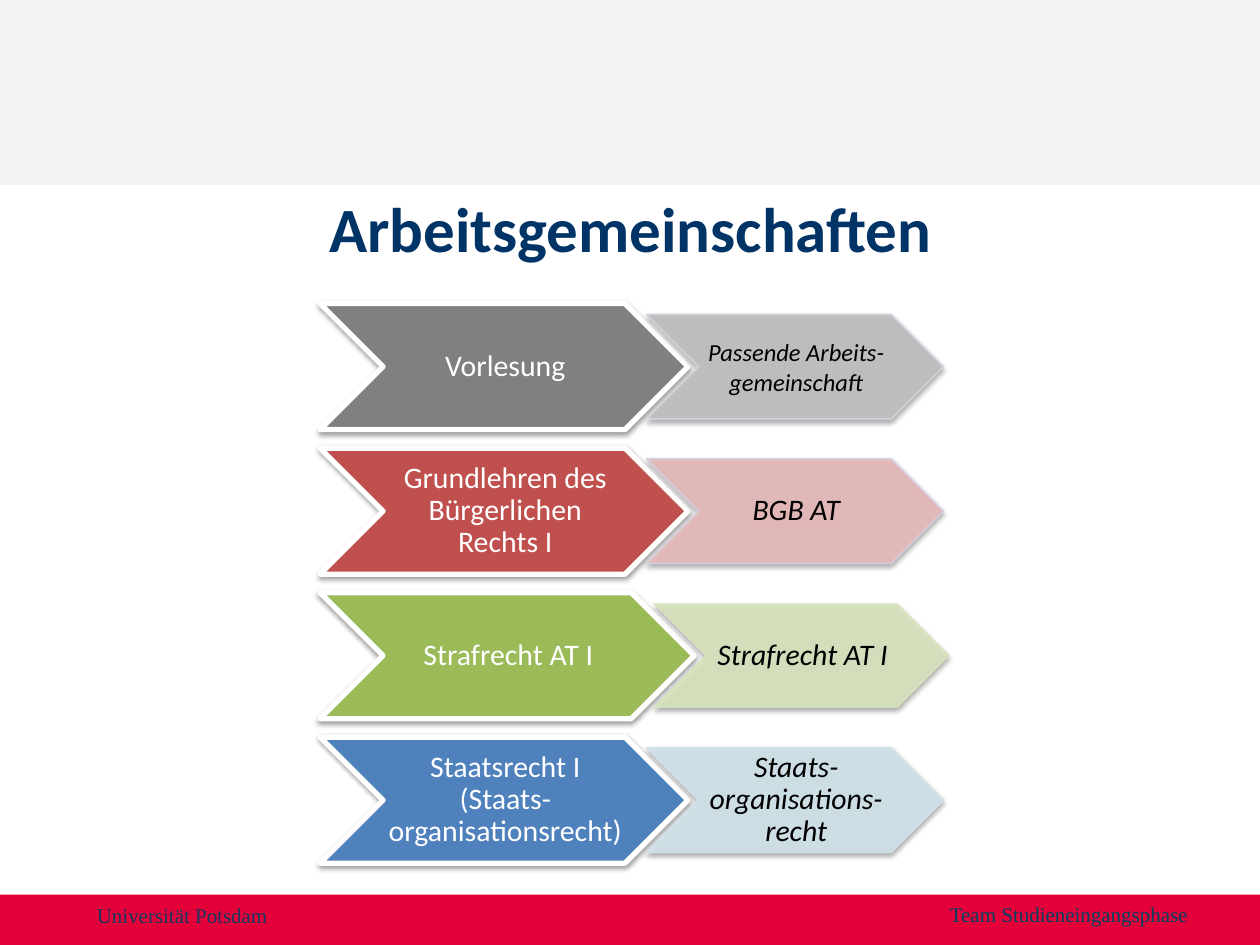
from lxml import etree
from pptx import Presentation
from pptx.dml.color import RGBColor
from pptx.enum import shapes, text
from pptx.oxml import ns
from pptx.util import Inches, Pt

COLORS = {
    "band": "F2F2F2", "footer": "E4013A", "university": "17375E",
    "team": "014260", "title": "003366", "white": "FFFFFF", "black": "000000",
}
TITLE = "Arbeitsgemeinschaften"
UNIVERSITY = "Universität Potsdam"
TEAM = "Team Studieneingangsphase"
COURSES = [
    {"lecture": "Vorlesung", "fill": "808080", "width": 2.92,
     "group": ["Passende Arbeits-", "gemeinschaft"], "size": 14, "spacing": 1.0,
     "group_fill": "BFBFBF", "border": "D8D3E0"},
    {"lecture": "Grundlehren des Bürgerlichen Rechts I", "fill": "C0504D", "width": 2.92,
     "group": ["BGB AT"], "group_fill": "E6B9B8", "border": "D2D2E4"},
    {"lecture": "Strafrecht AT I", "fill": "9BBB59", "width": 2.97,
     "group": ["Strafrecht AT I"], "group_fill": "D7E4BD", "border": None},
    {"lecture": "Staatsrecht I (Staats-organisationsrecht)", "fill": "4F81BD", "width": 2.92,
     "group": ["Staats-organisations-recht"], "group_fill": "D0E3EA", "border": "D0E3EA"},
]
LEFT, TOP, PITCH = 2.54, 2.41, 1.147
LECTURE_HEIGHT, GROUP_WIDTH, GROUP_HEIGHT, OVERLAP = 1.0, 2.36, 0.83, 0.33
CHEVRON_FRAME = {
    "word_wrap": True, "vertical_anchor": text.MSO_ANCHOR.MIDDLE,
    "margin_left": Inches(0.02), "margin_top": Inches(0.01),
    "margin_right": 0, "margin_bottom": Inches(0.01),
}


def rgb(color):
    return RGBColor.from_string(color)


def apply(target, values):
    for name, value in values.items():
        setattr(target, name, value)


def write(frame, lines, color, font, paragraph=None):
    for index, line in enumerate(lines):
        entry = frame.paragraphs[0] if index == 0 else frame.add_paragraph()
        entry.text = line
        apply(entry, paragraph or {})
        apply(entry.font, font)
        entry.font.color.rgb = rgb(color)


def add_block(slide, kind, box, fill, border=None, weight=0.75):
    block = slide.shapes.add_shape(kind, *map(Inches, box))
    block.shadow.inherit = False
    block.fill.solid()
    block.fill.fore_color.rgb = rgb(fill)
    if border:
        block.line.color.rgb = rgb(border)
        block.line.width = Pt(weight)
    else:
        block.line.fill.background()
    return block


def add_alpha(parent, percent):
    color = parent.find(".//" + ns.qn("a:srgbClr"))
    etree.SubElement(color, ns.qn("a:alpha"), val=str(percent * 1000))


def add_shadow(block, opacity, distance):
    effects = block._element.spPr.find(ns.qn("a:effectLst"))
    shadow = etree.SubElement(
        effects, ns.qn("a:outerShdw"), blurRad=str(Pt(3.1)), dist=str(Pt(distance)),
        dir="5400000", rotWithShape="0")
    etree.SubElement(shadow, ns.qn("a:srgbClr"), val=COLORS["black"])
    add_alpha(shadow, opacity)


def add_chevron(slide, box, lines, fill, color, border, weight, shadow, font, spacing):
    chevron = add_block(slide, shapes.MSO_SHAPE.CHEVRON, box, fill, border, weight)
    add_shadow(chevron, *shadow)
    apply(chevron.text_frame, CHEVRON_FRAME)
    write(chevron.text_frame, lines, color, {"name": "Calibri", **font},
          {"alignment": text.PP_ALIGN.CENTER, "line_spacing": spacing})
    return chevron


def add_course(slide, row, course):
    top = TOP + row * PITCH
    add_chevron(slide, (LEFT, top, course["width"], LECTURE_HEIGHT), [course["lecture"]],
                course["fill"], COLORS["white"], COLORS["white"], 3, (38, 1.6),
                {"size": Pt(17)}, 0.9)
    group_box = (LEFT + course["width"] - OVERLAP, top + (LECTURE_HEIGHT - GROUP_HEIGHT) / 2,
                 GROUP_WIDTH, GROUP_HEIGHT)
    group = add_chevron(slide, group_box, course["group"], course["group_fill"],
                        COLORS["black"], course["border"], 0.75, (35, 1.8),
                        {"size": Pt(course.get("size", 17)), "italic": True},
                        course.get("spacing", 0.9))
    add_alpha(group._element.spPr.find(ns.qn("a:solidFill")), 90)


def add_label(slide, box, label, color, frame):
    field = slide.shapes.add_textbox(*map(Inches, box))
    apply(field.text_frame, frame)
    write(field.text_frame, [label], color, {"name": "Times New Roman", "size": Pt(12)})


def main():
    deck = Presentation()
    apply(deck, {"slide_width": Inches(10), "slide_height": Inches(7.5)})
    slide = deck.slides.add_slide(deck.slide_layouts[5])

    for box, fill in (((0, 0, 10, 1.47), "band"), ((0, 7.1, 10, 0.4), "footer")):
        add_block(slide, shapes.MSO_SHAPE.RECTANGLE, box, COLORS[fill])
    add_label(slide, (0.67, 7.06, 4.41, 0.4), UNIVERSITY, COLORS["university"],
              {"word_wrap": True, "vertical_anchor": text.MSO_ANCHOR.MIDDLE})

    for row, course in enumerate(COURSES):
        add_course(slide, row, course)

    title = slide.shapes.title
    apply(title, {"left": Inches(0.2), "top": Inches(1.45),
                  "width": Inches(9.61), "height": Inches(0.71)})
    title.text_frame.vertical_anchor = text.MSO_ANCHOR.TOP
    write(title.text_frame, [TITLE], COLORS["title"],
          {"name": "Calibri", "size": Pt(36), "bold": True},
          {"alignment": text.PP_ALIGN.CENTER})
    add_label(slide, (7.44, 7.11, 2.12, 0.3), TEAM, COLORS["team"], {"word_wrap": False})

    deck.save("out.pptx")


if __name__ == "__main__":
    main()
